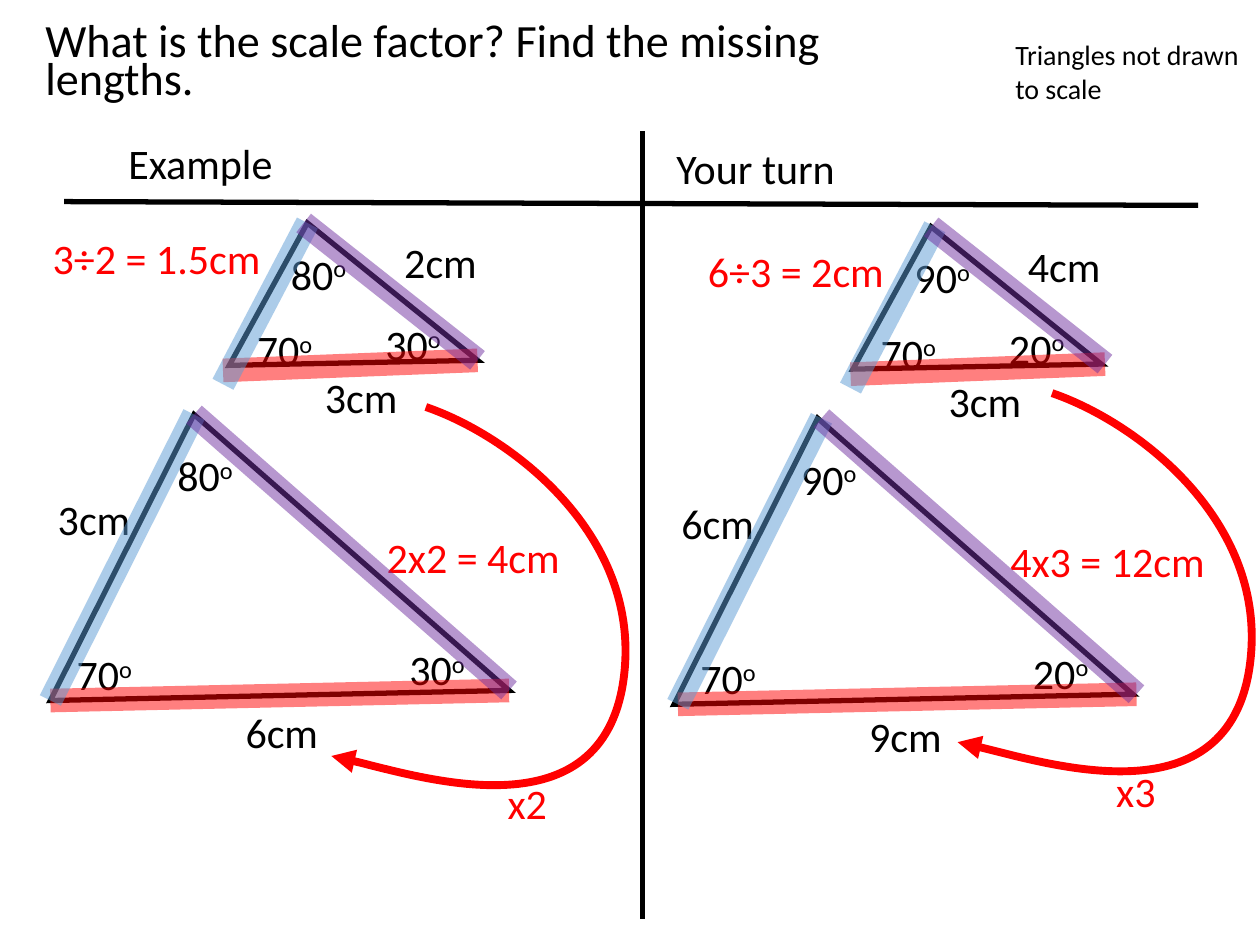
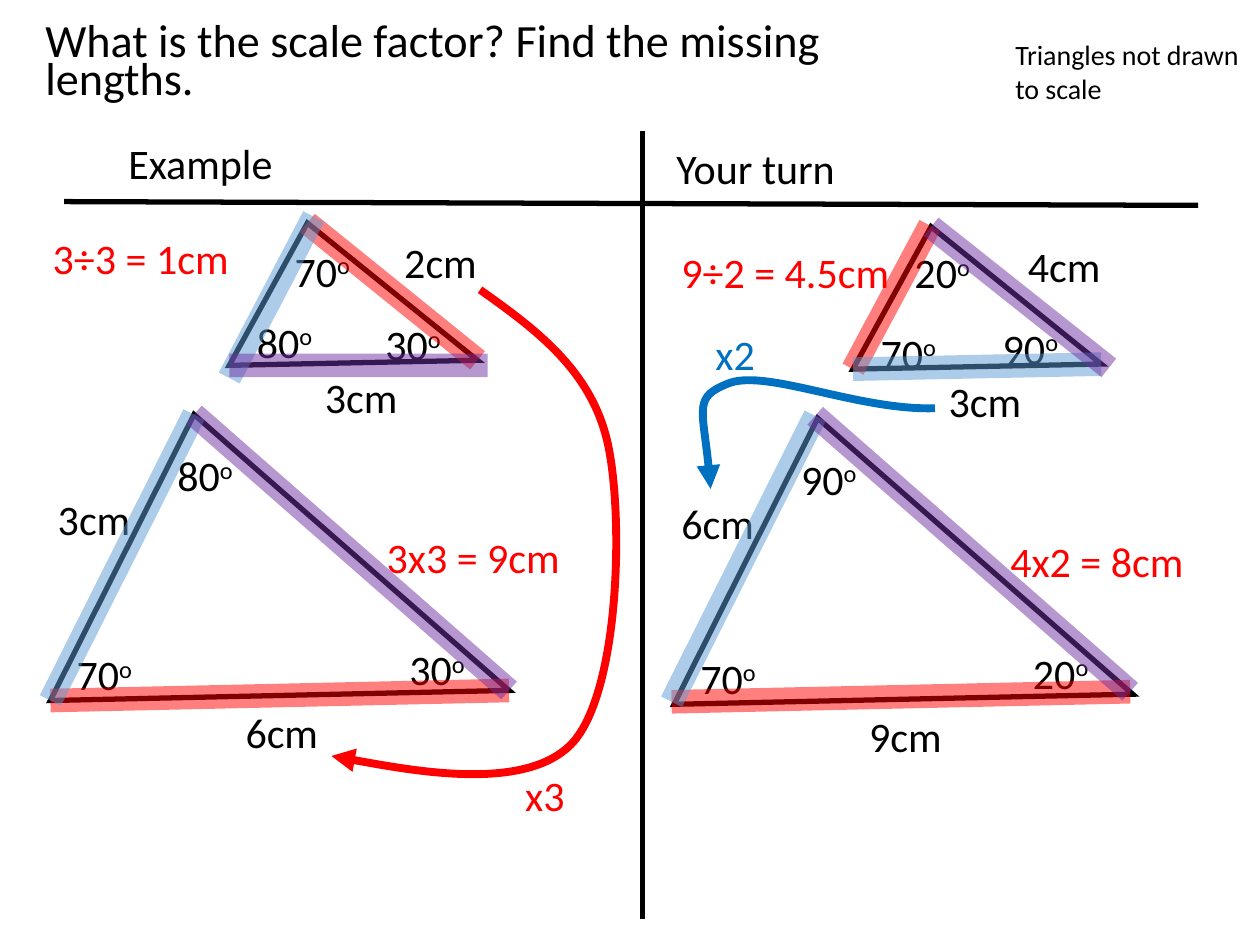
import pptx
import pptx.util
import pptx.dml.color
import pptx.enum.shapes
import pptx.enum.text
import pptx.oxml
import pptx.oxml.ns
from dataclasses import dataclass

PX = 9144  # 100 px to the inch
FONT = "Calibri"
BLACK = pptx.dml.color.RGBColor(0x00, 0x00, 0x00)
WHITE = pptx.dml.color.RGBColor(0xFF, 0xFF, 0xFF)
RED = pptx.dml.color.RGBColor(0xFF, 0x00, 0x00)
SKY = pptx.dml.color.RGBColor(0x5B, 0x9B, 0xD5)
PURPLE = pptx.dml.color.RGBColor(0x70, 0x30, 0xA0)
BLUE = pptx.dml.color.RGBColor(0x00, 0x70, 0xC0)

EXAMPLE_BOX = (0, 0)
TURN_BOX = (495, 3)

# Corners are top, left, right, relative to the panel
LARGE = ((154, 329), (40, 556), (404, 548))
SMALL = ((244, 177), (182, 290), (379, 286))
LARGE_ANGLES = ((131, 352), (51, 510), (315, 506))
SMALL_ANGLES = ((221, 192), (194, 252), (296, 248))
# Side labels: large left, large base, small right, small base
SIDE_SPOTS = ((36, 387), (185, 556), (311, 183), (248, 290))
LARGE_RESULT = (297, 417)

MATCHED_BARS = ((RED, (177, 294), (379, 286)),
                (SKY, (177, 305), (244, 177)),
                (PURPLE, (379, 286), (241, 177)))
SWEEP = ((338, 323), (408, 347), (514, 429), (494, 545),
         (473, 662), (295, 606), (263, 600))


@dataclass
class Panel:
    """What one half of a slide shows; all spots are relative to the half."""
    large_angles: tuple
    small_angles: tuple
    sides: tuple
    large_result: str
    small_result: tuple
    factor: tuple
    curve: tuple
    small_bars: tuple = MATCHED_BARS
    small_spots: tuple = SMALL_ANGLES
    large_shift: tuple = (0, 0)
    small_shift: tuple = (0, 0)
    curve_colour: object = RED


def moved(point, shift):
    return point[0] + shift[0], point[1] + shift[1]


def emu(*lengths):
    return [pptx.util.Emu(length * PX) for length in lengths]


def add_xml(parent, tag, **attributes):
    child = pptx.oxml.ns.qn(tag)
    element = parent.makeelement(child, attributes)
    parent.append(element)
    return element


def write(frame, text, size=24, colour=BLACK, raised="", spacing=None):
    """Fill a text frame, with an optional superscript after the text."""
    para = frame.paragraphs[0]
    para.alignment = pptx.enum.text.PP_ALIGN.LEFT
    if spacing:
        para.line_spacing = spacing
    for words in filter(None, (text, raised)):
        span = para.add_run()
        span.text = words
        span.font.name = FONT
        span.font.size = pptx.util.Pt(size)
        span.font.color.rgb = colour
    if raised:
        span.font._element.set("baseline", "30000")


def add_label(page, spot, text, **style):
    width = 66 if style.get("raised") else 20 + round(14.5 * len(text))
    if text.endswith("cm"):
        width = {3: 78, 9: 159, 10: 176, 11: 186}[len(text)]
        if "÷" in text and len(text) == 9:
            width = 161
    width = {"Example": 136, "Your turn": 147, "x2": 52, "x3": 52}.get(text, width)
    box = page.shapes.add_textbox(*emu(*spot, width, 50))
    box.text_frame.word_wrap = False
    write(box.text_frame, text, **style)


def add_line(page, start, end, colour=BLACK, weight=3, opacity=None):
    line = page.shapes.add_connector(
        pptx.enum.shapes.MSO_CONNECTOR.STRAIGHT, *emu(*start, *end))
    line.line.color.rgb = colour
    line.line.width = pptx.util.Pt(weight)
    properties = line._element.spPr
    if opacity:
        swatch = next(properties.iter(pptx.oxml.ns.qn("a:srgbClr")))
        add_xml(swatch, "a:alpha", val=str(opacity * 1000))
    add_xml(properties, "a:effectLst")


def add_outline(page, points, colour, weight, close):
    builder = page.shapes.build_freeform(*points[0], scale=PX)
    builder.add_line_segments(points[1:], close=close)
    outline = builder.convert_to_shape()
    outline.shadow.inherit = False
    outline.line.color.rgb = colour
    outline.line.width = pptx.util.Pt(weight)
    return outline


def add_triangle(page, corners):
    triangle = add_outline(page, corners, BLACK, 3, close=True)
    triangle.fill.solid()
    triangle.fill.fore_color.rgb = WHITE
    add_xml(triangle.line._get_or_add_ln(), "a:miter", lim="800000")


def add_curved_arrow(page, points, colour):
    """Draw cubic curves through points: a start, then control, control, end."""
    arrow = add_outline(page, points, colour, 4.5, close=False)
    arrow.fill.background()
    steps = list(arrow._element.iter(pptx.oxml.ns.qn("a:lnTo")))
    route = steps[0].getparent()
    for first in range(0, len(steps), 3):
        curve = add_xml(route, "a:cubicBezTo")
        for step in steps[first:first + 3]:
            curve.append(step[0])
            route.remove(step)
    add_xml(arrow.line._get_or_add_ln(), "a:tailEnd", type="triangle")


def add_panel(page, box, panel):
    def place(point, shift=(0, 0)):
        return moved(moved(point, shift), box)

    for corners, spots, angles in (
            (LARGE, LARGE_ANGLES, panel.large_angles),
            (SMALL, panel.small_spots, panel.small_angles)):
        add_triangle(page, [place(corner) for corner in corners])
        for spot, angle in zip(spots, angles):
            add_label(page, place(spot), angle, raised="o")
    for spot, side in zip(SIDE_SPOTS, panel.sides):
        add_label(page, place(spot), side)
    factor, factor_spot = panel.factor
    add_label(page, place(factor_spot), factor, colour=panel.curve_colour)
    add_label(page, place(LARGE_RESULT), panel.large_result, colour=RED)
    result, result_spot = panel.small_result
    add_label(page, place(result_spot), result, colour=RED)

    top, left, right = LARGE
    large_bars = ((RED, left, right), (SKY, left, top), (PURPLE, right, top))
    for bars, shift in ((large_bars, panel.large_shift),
                        (panel.small_bars, panel.small_shift)):
        for colour, start, end in bars:
            add_line(page, place(start, shift), place(end, shift),
                     colour, weight=13.5, opacity=49)
    add_curved_arrow(page, [place(point) for point in panel.curve],
                     panel.curve_colour)


def add_frame(page):
    """Title, note, column headings and dividing lines."""
    title = page.shapes.title
    title.left, title.top, title.width, title.height = emu(26, 14, 752, 75)
    frame = title.text_frame
    frame.auto_size = pptx.enum.text.MSO_AUTO_SIZE.NONE
    frame.word_wrap = True
    frame.vertical_anchor = pptx.enum.text.MSO_ANCHOR.MIDDLE
    write(frame, "What is the scale factor? Find the missing lengths.",
          size=26.4, spacing=0.7)

    note = page.shapes.add_textbox(*emu(796, 25, 204, 64))
    note.fill.solid()
    note.fill.fore_color.rgb = WHITE
    note.text_frame.word_wrap = True
    write(note.text_frame, "Triangles not drawn to scale", size=16)

    add_label(page, (92, 104), "Example")
    add_label(page, (527, 108), "Your turn")
    add_line(page, (51, 160), (951, 163))
    add_line(page, (510, 104), (510, 729))


def add_page(deck, example, turn):
    page = deck.slides.add_slide(deck.slide_layouts[5])
    add_frame(page)
    add_panel(page, EXAMPLE_BOX, example)
    add_panel(page, TURN_BOX, turn)


def main():
    deck = pptx.Presentation()
    deck.slide_width, deck.slide_height = emu(1000, 750)

    example_sides = ("3cm", "6cm", "2cm", "3cm")
    turn_sides = ("6cm", "9cm", "4cm", "3cm")
    example_angles = ("80", "70", "30")
    turn_angles = ("90", "70", "20")

    add_page(
        deck,
        Panel(example_angles, example_angles, example_sides, "2x2 = 4cm",
              ("3÷2 = 1.5cm", (32, 180)), ("x2", (393, 612)), SWEEP),
        Panel(turn_angles, turn_angles, turn_sides, "4x3 = 12cm",
              ("6÷3 = 2cm", (57, 187)), ("x3", (381, 600)),
              tuple(moved(point, (2, -14)) for point in SWEEP),
              large_shift=(3, 0), small_shift=(3, 0)))
    add_page(
        deck,
        Panel(example_angles, ("70", "80", "30"), example_sides, "3x3 = 9cm",
              ("3÷3 = 1cm", (32, 180)), ("x3", (407, 606)),
              ((381, 230), (426, 262), (471, 295), (483, 355),
               (495, 415), (491, 548), (455, 589),
               (418, 630), (295, 606), (263, 600)),
              small_bars=((RED, (379, 286), (244, 177)),
                          (SKY, (182, 300), (249, 172)),
                          (PURPLE, (387, 290), (182, 290))),
              small_spots=((224, 190), (194, 246), (296, 248))),
        Panel(turn_angles, ("20", "70", "90"), turn_sides, "4x2 = 8cm",
              ("9÷2 = 4.5cm", (36, 188)), ("x2", (63, 253)),
              ((247, 321), (187, 323), (114, 290), (84, 301),
               (55, 312), (64, 322), (69, 385)),
              small_bars=((RED, (182, 290), (243, 176)),
                          (SKY, (182, 290), (379, 286)),
                          (PURPLE, (385, 289), (244, 177))),
              small_spots=((221, 188), (194, 252), (291, 248)),
              large_shift=(-2, -2), curve_colour=BLUE))
    deck.save("out.pptx")


if __name__ == "__main__":
    main()
